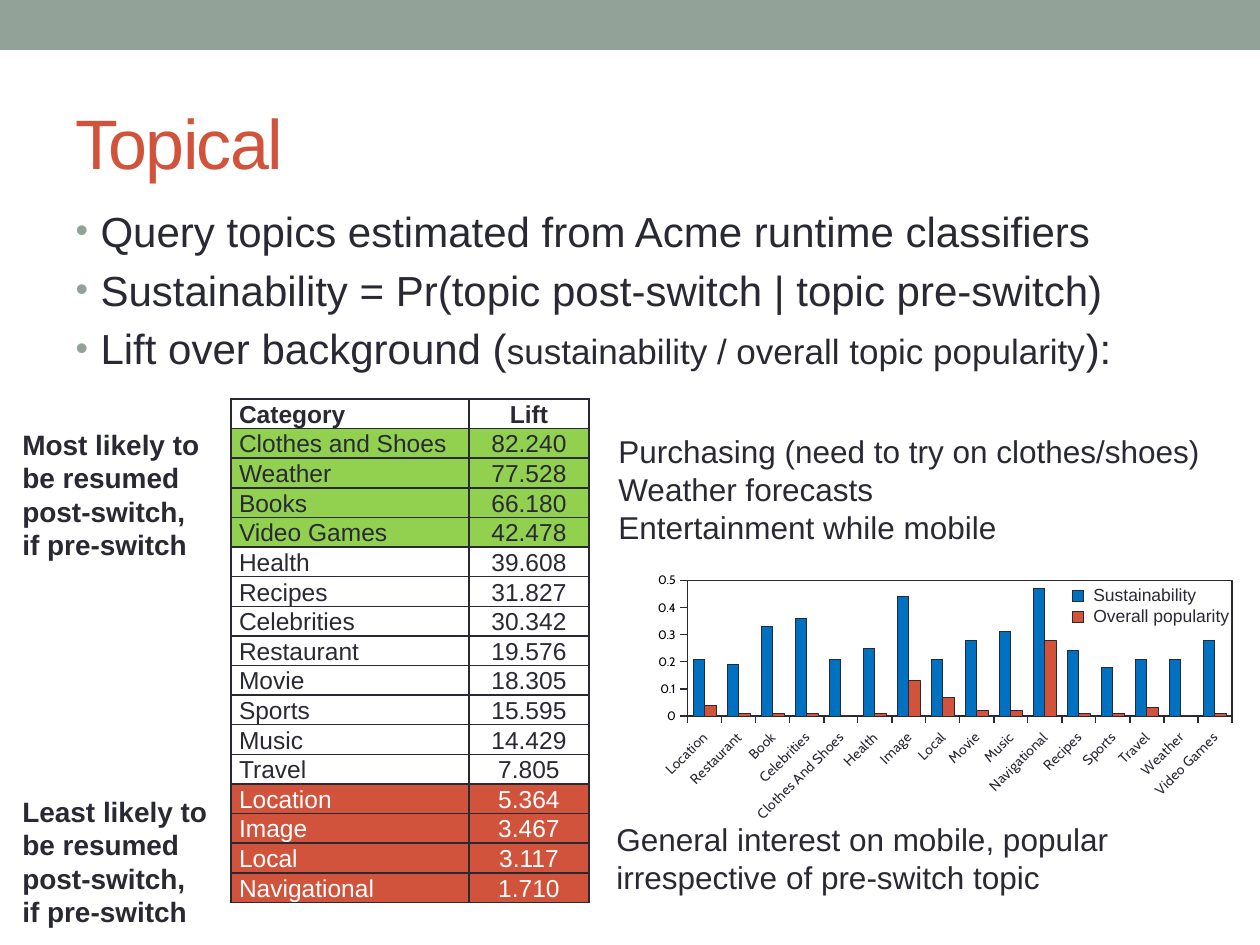
from lxml import etree
from pptx import Presentation
from pptx.chart.data import CategoryChartData
from pptx.dml.color import RGBColor
from pptx.enum.chart import XL_CHART_TYPE, XL_LEGEND_POSITION, XL_TICK_MARK
from pptx.enum.shapes import MSO_SHAPE
from pptx.enum.text import MSO_ANCHOR, MSO_AUTO_SIZE, PP_ALIGN
from pptx.oxml import parse_xml
from pptx.oxml.ns import nsdecls, qn
from pptx.util import Emu, Pt

RECT = MSO_SHAPE.RECTANGLE
COLUMNS = XL_CHART_TYPE.COLUMN_CLUSTERED
LEGEND_RIGHT = XL_LEGEND_POSITION.RIGHT
TICK_OUT, TICK_NONE = XL_TICK_MARK.OUTSIDE, XL_TICK_MARK.NONE
LEFT, CENTER = PP_ALIGN.LEFT, PP_ALIGN.CENTER
MIDDLE, BOTTOM = MSO_ANCHOR.MIDDLE, MSO_ANCHOR.BOTTOM
NO_FIT, GROW = MSO_AUTO_SIZE.NONE, MSO_AUTO_SIZE.SHAPE_TO_FIT_TEXT

DARK, SAGE, RED, GREEN, BLUE, WHITE = (
    "292934", "93A299", "D2533C", "92D050", "0070C0", "FFFFFF")

BULLETS = [
    [("Query topics estimated from Acme runtime classifiers", 24)],
    [("Sustainability = Pr(topic post-switch | topic pre-switch)", 24)],
    [("Lift over background (", 24),
     ("sustainability / overall topic popularity", 20), ("):", 24)],
]
LIFTS = [
    ("Clothes and Shoes", "82.240"), ("Weather", "77.528"), ("Books", "66.180"),
    ("Video Games", "42.478"), ("Health", "39.608"), ("Recipes", "31.827"),
    ("Celebrities", "30.342"), ("Restaurant", "19.576"), ("Movie", "18.305"),
    ("Sports", "15.595"), ("Music", "14.429"), ("Travel", "7.805"),
    ("Location", "5.364"), ("Image", "3.467"), ("Local", "3.117"),
    ("Navigational", "1.710"),
]
TOPICS = [
    ("Location", 0.21, 0.04), ("Restaurant", 0.19, 0.01), ("Book", 0.33, 0.01),
    ("Celebrities", 0.36, 0.01), ("Clothes And Shoes", 0.21, 0),
    ("Health", 0.25, 0.01), ("Image", 0.44, 0.13), ("Local", 0.21, 0.07),
    ("Movie", 0.28, 0.02), ("Music", 0.31, 0.02), ("Navigational", 0.47, 0.28),
    ("Recipes", 0.24, 0.01), ("Sports", 0.18, 0.01), ("Travel", 0.21, 0.03),
    ("Weather", 0.21, 0), ("Video Games", 0.28, 0.01),
]
NOTES = [
    ((606, 426, 612, 127), 18, False,
     ["Purchasing (need to try on clothes/shoes)", "Weather forecasts",
      "Entertainment while mobile"]),
    ((604, 814, 530, 89), 18, False,
     ["General interest on mobile, popular",
      "irrespective of pre-switch topic"]),
    ((10, 421, 205, 149), 16, True,
     ["Most likely to", "be resumed", "post-switch,", "if pre-switch"]),
    ((10, 788, 213, 149), 16, True,
     ["Least likely to", "be resumed", "post-switch,", "if pre-switch"]),
]
LEGEND_LABELS = ((1081, 578, 163, 55), 10, False,
                 ["Sustainability", "Overall popularity"])


def px(n):
    """Convert pixels at 126 to the inch into EMU."""
    return Emu(round(n * 914400 / 126))


def rgb(value):
    """Turn a hex string into a colour."""
    return RGBColor.from_string(value)


def place(sp, left, top, width, height):
    """Move and size a shape in pixels."""
    sp.left, sp.top, sp.width, sp.height = map(px, (left, top, width, height))


def style(font, size, color=DARK, name="Arial", bold=False):
    """Format a font."""
    font.size, font.name, font.bold = Pt(size), name, bold
    font.color.rgb = rgb(color)


def add_text(p, text, align=LEFT, **fmt):
    """Append a formatted run to a paragraph."""
    p.alignment = align
    r = p.add_run()
    r.text = text
    style(r.font, **fmt)
    return r


def paragraphs(tf, count):
    """Return the first paragraph and as many new ones as needed."""
    return [tf.paragraphs[0]] + [tf.add_paragraph() for _ in range(count - 1)]


def add_band(s):
    """Draw the strip along the top edge."""
    sp = s.shapes.add_shape(RECT, 0, 0, px(1260), px(50))
    sp.shadow.inherit = False
    sp.fill.solid()
    sp.fill.fore_color.rgb = rgb(SAGE)
    sp.line.fill.background()


def fill_title(sp, text):
    """Place and write the title."""
    place(sp, 63, 73, 1134, 136)
    tf = sp.text_frame
    tf.vertical_anchor, tf.auto_size = MIDDLE, NO_FIT
    r = add_text(tf.paragraphs[0], text, size=40, color=RED)
    r.font._element.set("spc", "-100")


def fill_bullets(sp, bullets):
    """Place and write the bulleted list."""
    place(sp, 63, 199, 1134, 725)
    tf = sp.text_frame
    tf.auto_size = NO_FIT
    for p, runs in zip(paragraphs(tf, len(bullets)), bullets):
        for text, size in runs:
            add_text(p, text, size=size)
        pPr = p._p.get_or_add_pPr()
        pPr.set("marL", str(px(25)))
        pPr.set("indent", str(px(-25)))
        color = etree.SubElement(pPr, qn("a:buClr"))
        etree.SubElement(color, qn("a:srgbClr"), val=SAGE)
        etree.SubElement(pPr, qn("a:buSzPct"), val="85000")
        etree.SubElement(pPr, qn("a:buFont"), typeface="Arial")
        etree.SubElement(pPr, qn("a:buChar"), char="•")


def add_note(s, box, size, bold, lines):
    """Add an unwrapped text box with one paragraph a line."""
    tf = s.shapes.add_textbox(*map(px, box)).text_frame
    tf.word_wrap, tf.auto_size = False, GROW
    for p, line in zip(paragraphs(tf, len(lines)), lines):
        add_text(p, line, size=size, bold=bold)


def border_cell(cell):
    """Give a cell a thin dark border on every side."""
    tcPr = cell._tc.get_or_add_tcPr()
    for i, side in enumerate(("lnL", "lnR", "lnT", "lnB")):
        tcPr.insert(i, parse_xml(
            f'<a:{side} {nsdecls("a")} w="12700"><a:solidFill>'
            f'<a:srgbClr val="{DARK}"/></a:solidFill></a:{side}>'))


def fill_cell(cell, text, left, align, fill, **fmt):
    """Write and format one table cell."""
    cell.margin_left, cell.margin_right = px(left), px(1)
    cell.margin_top, cell.margin_bottom = px(1), 0
    cell.vertical_anchor = BOTTOM
    add_text(cell.text_frame.paragraphs[0], text, align, size=14, **fmt)
    if fill:
        cell.fill.solid()
        cell.fill.fore_color.rgb = rgb(fill)
    else:
        cell.fill.background()
    border_cell(cell)


def add_lift_table(s):
    """Add the table of lifts, with the top and bottom four coloured."""
    rows = [("Category", "Lift")] + LIFTS
    table = s.shapes.add_table(
        len(rows), 2, px(231), px(399), px(358), px(504)).table
    table.columns[0].width, table.columns[1].width = px(238), px(120)
    for i, (category, lift) in enumerate(rows):
        fill = GREEN if 1 <= i <= 4 else RED if i >= len(rows) - 4 else None
        fmt = dict(fill=fill, color=WHITE if fill == RED else DARK, bold=i == 0)
        fill_cell(table.cell(i, 0), category, 8, LEFT, **fmt)
        fill_cell(table.cell(i, 1), lift, 1, CENTER, **fmt)


def set_layout(parent, index, inner, **box):
    """Fix the place of a chart part as fractions of the chart."""
    for old in parent.findall(qn("c:layout")):
        parent.remove(old)
    target = '<c:layoutTarget val="inner"/>' if inner else ""
    modes = '<c:xMode val="edge"/><c:yMode val="edge"/>'
    sizes = "".join(f'<c:{k} val="{v}"/>' for k, v in box.items())
    parent.insert(index, parse_xml(
        f'<c:layout {nsdecls("c")}><c:manualLayout>{target}{modes}{sizes}'
        '</c:manualLayout></c:layout>'))


def format_axis(axis, size, color):
    """Format an axis line, its ticks and its labels."""
    axis.has_major_gridlines = False
    axis.major_tick_mark, axis.minor_tick_mark = TICK_OUT, TICK_NONE
    axis.format.line.color.rgb = rgb(DARK)
    axis.format.line.width = Pt(0.75)
    style(axis.tick_labels.font, size, color, "Cabin")


def add_topic_chart(s):
    """Add the column chart of sustainability and popularity."""
    names, sustainability, popularity = zip(*TOPICS)
    data = CategoryChartData()
    data.categories = names
    data.add_series(" ", sustainability)
    data.add_series(" ", popularity)
    chart = s.shapes.add_chart(
        COLUMNS, px(640), px(570), px(598), px(261), data).chart
    chart.has_title = False
    style(chart.font, 7, name="Cabin")
    plot = chart.plots[0]
    plot.gap_width, plot.overlap, plot.vary_by_categories = 100, 0, False
    for series, color in zip(plot.series, (BLUE, RED)):
        series.format.fill.solid()
        series.format.fill.fore_color.rgb = rgb(color)
        series.format.line.color.rgb = rgb(DARK)
        series.format.line.width = Pt(0.5)
    format_axis(chart.category_axis, 8, DARK)
    labels = chart.category_axis._element.find(qn("c:txPr"))
    labels.find(qn("a:bodyPr")).set("rot", "-2700000")
    value_axis = chart.value_axis
    format_axis(value_axis, 7, "000000")
    value_axis.minimum_scale, value_axis.maximum_scale = 0, 0.5
    value_axis.major_unit = 0.1
    value_axis.tick_labels.number_format = "General"
    value_axis.tick_labels.number_format_is_linked = False
    area = chart._chartSpace.chart.plotArea
    set_layout(area, 0, True, x=0.08, y=0.04, w=0.91, h=0.52)
    area.append(parse_xml(
        f'<c:spPr {nsdecls("c", "a")}><a:noFill/><a:ln w="9525"><a:solidFill>'
        f'<a:srgbClr val="{DARK}"/></a:solidFill></a:ln></c:spPr>'))
    chart.has_legend = True
    legend = chart.legend
    legend.position, legend.include_in_layout = LEGEND_RIGHT, False
    style(legend.font, 10, name="Cabin")
    set_layout(legend._element, 1, False, x=0.72, y=0.06, w=0.04, h=0.16)


def main():
    """Build the slide and save it."""
    prs = Presentation()
    prs.slide_width, prs.slide_height = px(1260), px(945)
    s = prs.slides.add_slide(prs.slide_layouts[1])
    add_band(s)
    fill_title(s.shapes.title, "Topical")
    fill_bullets(s.placeholders[1], BULLETS)
    add_lift_table(s)
    for note in NOTES:
        add_note(s, *note)
    add_topic_chart(s)
    add_note(s, *LEGEND_LABELS)
    prs.save("out.pptx")


if __name__ == "__main__":
    main()
